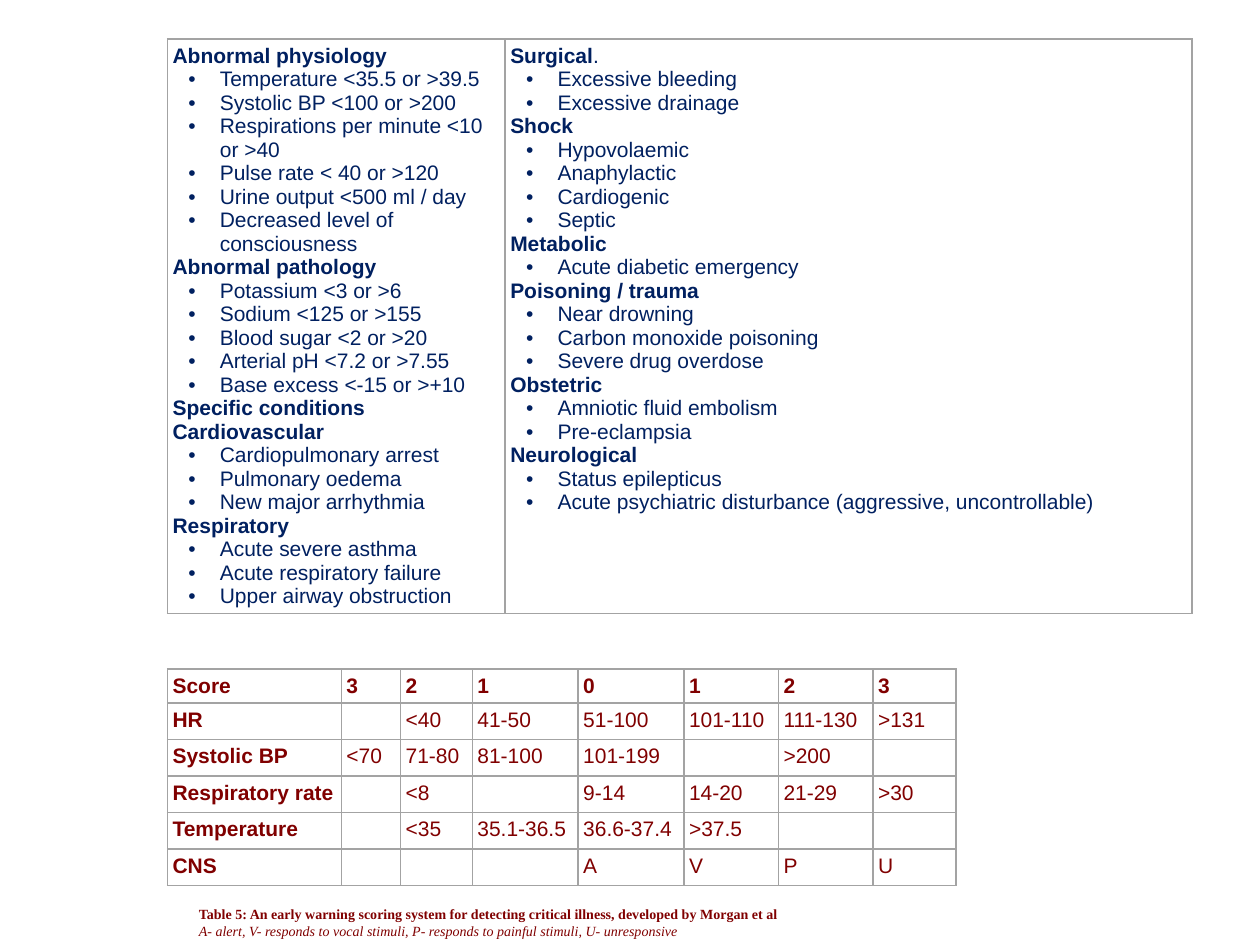
from dataclasses import dataclass

from lxml import etree
from pptx import Presentation
from pptx.dml.color import RGBColor
from pptx.enum.text import MSO_ANCHOR
from pptx.oxml.ns import qn
from pptx.util import Inches, Pt

TOP = MSO_ANCHOR.TOP
BOTTOM = MSO_ANCHOR.BOTTOM
GRID_COLUMNS, GRID_ROWS = 100, 75
SLIDE_WIDTH, SLIDE_HEIGHT = Inches(10), Inches(7.5)


@dataclass(frozen=True)
class Theme:
    """Colours, fonts and sizes used on the slide."""

    criteria: str = "002060"
    score: str = "800000"
    border: str = "A3A3A3"
    background: str = "FFFFFF"
    table_font: str = "Arial"
    caption_font: str = "Times New Roman"
    table_size: int = 12
    caption_size: int = 8
    border_width: int = 1


@dataclass(frozen=True)
class Box:
    """A region measured in grid columns and rows."""

    left: float
    top: float
    width: float
    height: float

    def lengths(self):
        """Return left, top, width and height as slide lengths."""
        return across(self.left), down(self.top), across(self.width), down(self.height)


@dataclass(frozen=True)
class Group:
    """A bold heading with its bulleted criteria."""

    heading: str
    items: tuple = ()
    suffix: str = ""


THEME = Theme()
CELL_MARGIN = 0.4
BULLET_LEFT, BULLET_HANG = 3.75, 2.5

CRITERIA_BOX = Box(13.3, 3.1, 81.3, 45.6)
CRITERIA_WIDTHS = (26.8, 54.5)
CRITERIA = (
    (
        Group("Abnormal physiology", (
            "Temperature <35.5 or >39.5",
            "Systolic BP <100 or >200",
            "Respirations per minute <10 or >40",
            "Pulse rate < 40 or >120",
            "Urine output <500 ml / day",
            "Decreased level of consciousness",
        )),
        Group("Abnormal pathology", (
            "Potassium <3 or >6",
            "Sodium <125 or >155",
            "Blood sugar <2 or >20",
            "Arterial pH <7.2 or >7.55",
            "Base excess <-15 or >+10",
        )),
        Group("Specific conditions"),
        Group("Cardiovascular", (
            "Cardiopulmonary arrest", "Pulmonary oedema", "New major arrhythmia",
        )),
        Group("Respiratory", (
            "Acute severe asthma", "Acute respiratory failure", "Upper airway obstruction",
        )),
    ),
    (
        Group("Surgical", ("Excessive bleeding", "Excessive drainage"), "."),
        Group("Shock", ("Hypovolaemic", "Anaphylactic", "Cardiogenic", "Septic")),
        Group("Metabolic", ("Acute diabetic emergency",)),
        Group("Poisoning / trauma", (
            "Near drowning", "Carbon monoxide poisoning", "Severe drug overdose",
        )),
        Group("Obstetric", ("Amniotic fluid embolism", "Pre-eclampsia")),
        Group("Neurological", (
            "Status epilepticus",
            "Acute psychiatric disturbance (aggressive, uncontrollable)",
        )),
    ),
)

SCORE_BOX = Box(13.3, 53.1, 62.6, 17.2)
SCORE_WIDTHS = (13.8, 4.7, 5.7, 8.4, 8.4, 7.5, 7.5, 6.6)
SCORE_HEIGHTS = (2.7,) + (2.9,) * 5
SCORES = (
    ("Score", "3", "2", "1", "0", "1", "2", "3"),
    ("HR", "", "<40", "41-50", "51-100", "101-110", "111-130", ">131"),
    ("Systolic BP", "<70", "71-80", "81-100", "101-199", "", ">200", ""),
    ("Respiratory rate", "", "<8", "", "9-14", "14-20", "21-29", ">30"),
    ("Temperature", "", "<35", "35.1-36.5", "36.6-37.4", ">37.5", "", ""),
    ("CNS", "", "", "", "A", "V", "P", "U"),
)

CAPTION_BOX = Box(14.8, 69.9, 72.7, 5.1)
CAPTION_TITLE = (
    "Table 5: An early warning scoring system for detecting critical illness, "
    "developed by Morgan et al"
)
CAPTION_KEY = (
    "A- alert, V- responds to vocal stimuli, P- responds to painful stimuli, U- unresponsive"
)


def across(columns):
    """Convert grid columns to a length."""
    return round(SLIDE_WIDTH * columns / GRID_COLUMNS)


def down(rows):
    """Convert grid rows to a length."""
    return round(SLIDE_HEIGHT * rows / GRID_ROWS)


def style_run(run, font_name, size, colour, bold=False, italic=False):
    """Apply type settings to a run."""
    font = run.font
    font.name, font.size = font_name, Pt(size)
    font.bold, font.italic = bold, italic
    font.color.rgb = RGBColor.from_string(colour)


def style_table_run(run, colour, bold):
    """Apply the table type settings to a run."""
    style_run(run, THEME.table_font, THEME.table_size, colour, bold)


def style_cell(cell):
    """Give a cell its margins, borders and clear fill."""
    cell.margin_left = cell.margin_right = across(CELL_MARGIN)
    cell.margin_top = cell.margin_bottom = down(CELL_MARGIN)
    cell.vertical_anchor = TOP
    properties = cell._tc.get_or_add_tcPr()
    for side in ("a:lnL", "a:lnR", "a:lnT", "a:lnB"):
        line = etree.SubElement(properties, qn(side), w=str(Pt(THEME.border_width)))
        fill = etree.SubElement(line, qn("a:solidFill"))
        etree.SubElement(fill, qn("a:srgbClr"), val=THEME.border)
    cell.fill.background()


def add_plain_table(slide, box, widths, heights):
    """Add a bordered, unbanded table in the box."""
    table = slide.shapes.add_table(len(heights), len(widths), *box.lengths()).table
    table.first_row = table.horz_banding = False
    for column, width in zip(table.columns, widths):
        column.width = across(width)
    for row, height in zip(table.rows, heights):
        row.height = down(height)
    for cell in table.iter_cells():
        style_cell(cell)
    return table


def add_bullet(paragraph):
    """Turn a paragraph into a hanging bullet."""
    properties = paragraph._p.get_or_add_pPr()
    properties.set("marL", str(across(BULLET_LEFT)))
    properties.set("indent", str(-across(BULLET_HANG)))
    etree.SubElement(properties, qn("a:buFont"), typeface=THEME.table_font)
    etree.SubElement(properties, qn("a:buChar"), char="•")


def fill_criteria_cell(cell, groups):
    """Write headed bullet groups into a cell."""
    lines = [
        line
        for group in groups
        for line in [(group.heading, group.suffix, True)]
        + [(item, "", False) for item in group.items]
    ]
    frame = cell.text_frame
    frame.text = "\n".join(text for text, _, _ in lines)
    for paragraph, (_, suffix, is_heading) in zip(frame.paragraphs, lines):
        if not is_heading:
            add_bullet(paragraph)
        style_table_run(paragraph.runs[0], THEME.criteria, is_heading)
        if suffix:
            run = paragraph.add_run()
            run.text = suffix
            style_table_run(run, THEME.criteria, False)


def add_criteria_table(slide, box):
    """Place the admission criteria in two columns."""
    table = add_plain_table(slide, box, CRITERIA_WIDTHS, (box.height,))
    for cell, groups in zip(table.iter_cells(), CRITERIA):
        fill_criteria_cell(cell, groups)


def add_score_table(slide, box):
    """Place the early warning score grid."""
    table = add_plain_table(slide, box, SCORE_WIDTHS, SCORE_HEIGHTS)
    for row, values in enumerate(SCORES):
        for column, value in enumerate(values):
            paragraph = table.cell(row, column).text_frame.paragraphs[0]
            if value:
                paragraph.text = value
                style_table_run(paragraph.runs[0], THEME.score, row == 0 or column == 0)
            else:
                size = str(THEME.table_size * 100)
                etree.SubElement(paragraph._p, qn("a:endParaRPr"), sz=size)


def add_caption(slide, box):
    """Place the bold table title above its italic key."""
    frame = slide.shapes.add_textbox(*box.lengths()).text_frame
    frame.word_wrap = True
    frame.vertical_anchor = BOTTOM
    frame.text = f"{CAPTION_TITLE}\n{CAPTION_KEY}"
    for paragraph, bold in zip(frame.paragraphs, (True, False)):
        style_run(paragraph.runs[0], THEME.caption_font, THEME.caption_size,
                  THEME.score, bold, not bold)


def main():
    """Build and save the slide."""
    presentation = Presentation()
    presentation.slide_width, presentation.slide_height = SLIDE_WIDTH, SLIDE_HEIGHT
    slide = presentation.slides.add_slide(presentation.slide_layouts[6])
    slide.background.fill.solid()
    slide.background.fill.fore_color.rgb = RGBColor.from_string(THEME.background)
    add_criteria_table(slide, CRITERIA_BOX)
    add_score_table(slide, SCORE_BOX)
    add_caption(slide, CAPTION_BOX)
    presentation.save("out.pptx")


if __name__ == "__main__":
    main()
